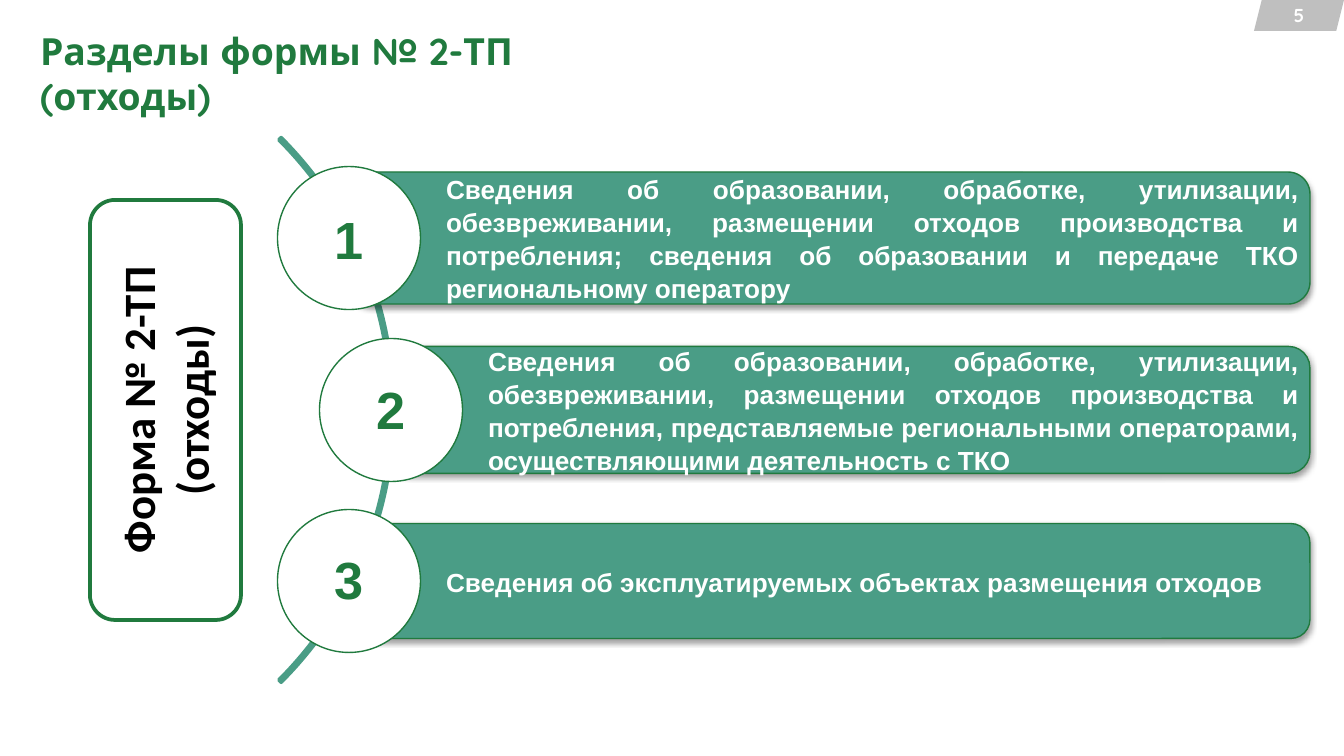
import lxml.etree
import pptx
import pptx.dml.color
import pptx.enum.shapes
import pptx.enum.text
import pptx.oxml.ns
import pptx.util

SCALE = 9144000 / 1344
COLORS = {
    "green": "207A3E",
    "teal": "4A9D86",
    "gray": "BFBFBF",
    "white": "FFFFFF",
    "black": "000000",
}
SHAPES = pptx.enum.shapes.MSO_SHAPE
ALIGN = pptx.enum.text.PP_ALIGN
ANCHOR = pptx.enum.text.MSO_ANCHOR
FIT = pptx.enum.text.MSO_AUTO_SIZE
DEFAULT_INSETS = (13, 7, 13, 7)

CIRCLE = 143
BAR_RIGHT = 1310
BAR_PADDING = 6
# Centre of the circle (x, y), height of the bar, text
SECTIONS = [
    (349, 238, 132, "Сведения об образовании, обработке, утилизации, обезвреживании, "
     "размещении отходов производства и потребления; сведения об образовании "
     "и передаче ТКО региональному оператору"),
    (391, 410, 127, "Сведения об образовании, обработке, утилизации, обезвреживании, "
     "размещении отходов производства и потребления, представляемые "
     "региональными операторами, осуществляющими деятельность с ТКО"),
    (349, 581, 115, "Сведения об эксплуатируемых объектах размещения отходов"),
]


def px(value):
    return pptx.util.Emu(round(value * SCALE))


def color(name):
    return pptx.dml.color.RGBColor.from_string(COLORS[name])


class Page:
    """Holds the style and the slide being drawn."""

    def __init__(self, deck):
        self.slide = deck.slides.add_slide(deck.slide_layouts[5])

    def fill_text(self, box, text, size, font, ink, align=ALIGN.LEFT, anchor=ANCHOR.TOP,
                  insets=DEFAULT_INSETS, fit=FIT.NONE, spacing=1.0):
        frame = box.text_frame
        frame.word_wrap = True
        frame.auto_size = fit
        frame.vertical_anchor = anchor
        (frame.margin_left, frame.margin_top,
         frame.margin_right, frame.margin_bottom) = map(px, insets)
        para = frame.paragraphs[0]
        para.alignment = align
        para.line_spacing = spacing
        span = para.add_run()
        span.text = text
        span.font.size = pptx.util.Pt(size)
        span.font.name = font
        span.font.bold = True
        span.font.color.rgb = color(ink)

    def title(self, place, text):
        box = self.slide.shapes.title
        box.left, box.top, box.width, box.height = map(px, place)
        self.fill_text(box, text, 20, "Quicksand", "green")

    def shape(self, kind, place, fill=None, line=None, width=0.75):
        box = self.slide.shapes.add_shape(kind, *map(px, place))
        box.shadow.inherit = False
        if fill:
            box.fill.solid()
            box.fill.fore_color.rgb = color(fill)
        else:
            box.fill.background()
        if line:
            box.line.color.rgb = color(line)
            box.line.width = pptx.util.Pt(width)
        else:
            box.line.fill.background()
        return box

    def text(self, place, text, size, font, ink, **style):
        box = self.slide.shapes.add_textbox(*map(px, place))
        self.fill_text(box, text, size, font, ink, **style)

    def arc(self, place):
        """Draw a thin band from 315 to 45 degrees."""
        band = self.shape(SHAPES.BLOCK_ARC, place, line="teal", width=2)
        for index, value in enumerate((189, 27, 0.004)):
            band.adjustments[index] = value

    def bar(self, place):
        box = self.shape(SHAPES.ROUNDED_RECTANGLE, place, "teal", "green")
        effects = box._element.spPr.find(pptx.oxml.ns.qn("a:effectLst"))
        shadow = lxml.etree.SubElement(
            effects, pptx.oxml.ns.qn("a:outerShdw"), blurRad=str(pptx.util.Pt(3.1)),
            dist=str(pptx.util.Pt(1.6)), dir="5400000", rotWithShape="0")
        tone = lxml.etree.SubElement(shadow, pptx.oxml.ns.qn("a:srgbClr"), val=COLORS["black"])
        lxml.etree.SubElement(tone, pptx.oxml.ns.qn("a:alpha"), val="38000")

    def section(self, x, y, height, text):
        top = y - height / 2
        width = BAR_RIGHT - x
        self.bar((x, top, width, height))
        self.text((x + BAR_PADDING, top + BAR_PADDING,
                   width - 2 * BAR_PADDING, height - 2 * BAR_PADDING),
                  text, 14, "Arial", "white", align=ALIGN.JUSTIFY,
                  anchor=ANCHOR.MIDDLE, insets=(91, 5, 5, 5), spacing=1.05)
        self.shape(SHAPES.OVAL, (x - CIRCLE / 2, y - CIRCLE / 2, CIRCLE, CIRCLE),
                   "white", "green")

    def upright_label(self, place, text):
        box = self.shape(SHAPES.ROUNDED_RECTANGLE, place, "white", "green", 2)
        self.fill_text(box, text, 24, "Calibri", "black", align=ALIGN.CENTER,
                       fit=FIT.SHAPE_TO_FIT_TEXT)
        box.text_frame._txBody.bodyPr.set("vert", "vert270")

    def page_number(self, place, text):
        tab = self.shape(SHAPES.PARALLELOGRAM, place, "gray")
        self.fill_text(tab, text, 10, "Quicksand", "white", align=ALIGN.CENTER,
                       anchor=ANCHOR.MIDDLE, insets=(15, 8, 15, 8))


def main():
    deck = pptx.Presentation()
    deck.slide_width, deck.slide_height = px(1344), px(756)
    page = Page(deck)
    page.title((27, 21, 668, 59), "Разделы формы № 2-ТП (отходы)")
    page.page_number((1254, 0, 90, 31), "5")
    page.arc((-376, 25, 770, 770))
    for section in SECTIONS:
        page.section(*section)
    page.upright_label((90, 200, 151, 420), "Форма № 2-ТП (отходы)")
    for index, (x, *_) in enumerate(SECTIONS):
        page.text((x - 37, 200 + 170 * index, 74, 77), str(index + 1), 28, "Arial", "green",
                  align=ALIGN.CENTER, fit=FIT.SHAPE_TO_FIT_TEXT)
    deck.save("out.pptx")


if __name__ == "__main__":
    main()
